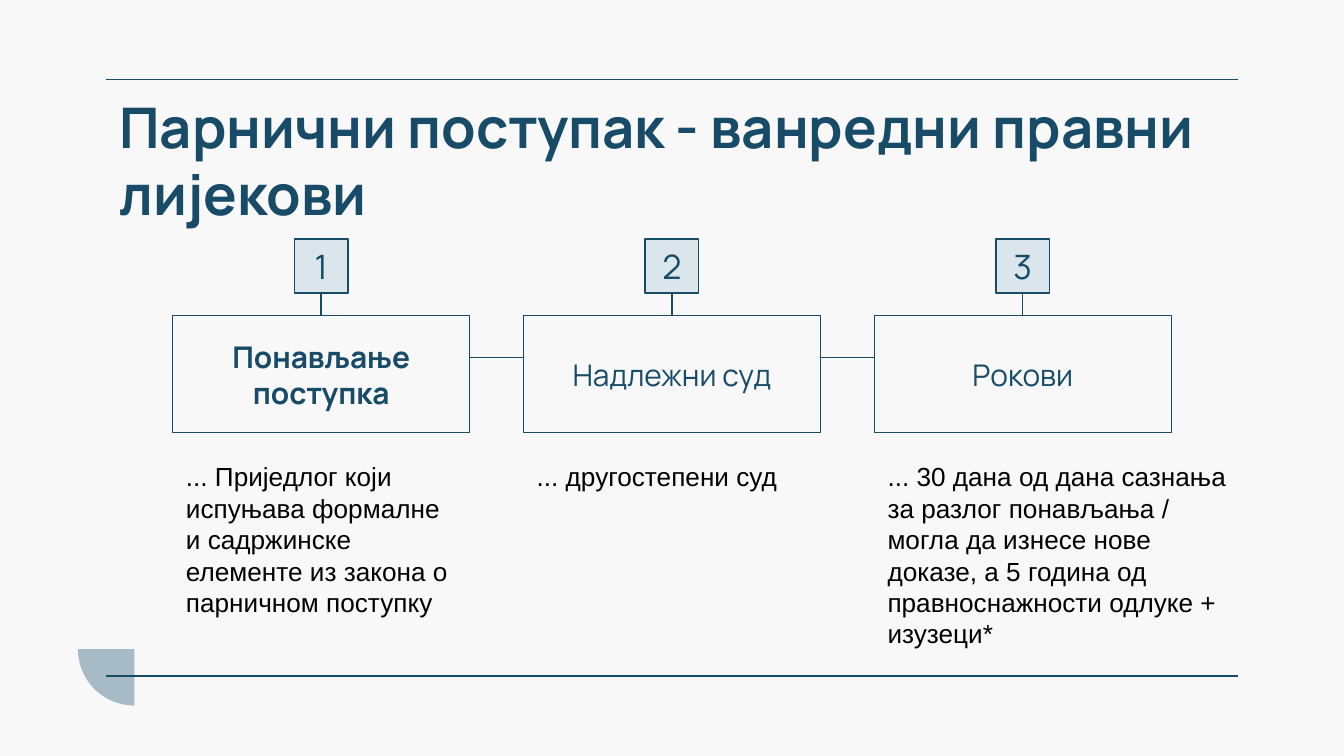
import math
from dataclasses import dataclass

import pptx
import pptx.dml.color
import pptx.enum.shapes
import pptx.enum.text
import pptx.oxml.ns
import pptx.util
from lxml import etree

Inches = pptx.util.Inches
Pt = pptx.util.Pt
Align = pptx.enum.text.PP_ALIGN
Anchor = pptx.enum.text.MSO_ANCHOR

NAVY = "174B67"
PALE_BLUE = "DAE6EC"
GREY_BLUE = "A7BBC7"
BACKGROUND = "F8F8F8"
BLACK = "000000"

SLIDE_WIDTH = 10
SLIDE_HEIGHT = SLIDE_WIDTH * 9 / 16
CARD_TOP, CARD_WIDTH, CARD_HEIGHT = 2.35, 2.21, 0.87
CARD_GAP = 0.4
CARD_STEP = CARD_WIDTH + CARD_GAP
CARD_LEFT = (SLIDE_WIDTH - CARD_WIDTH) / 2 - CARD_STEP
BADGE_TOP, BADGE_SIZE = 1.78, 0.4
LINK_Y, DETAIL_TOP = 2.66, 3.38


@dataclass
class Step:
    heading: str
    detail: str
    detail_width: float
    detail_height: float
    bold: bool = False


STEPS = [
    Step("Понављање поступка",
         "... Приједлог који испуњава формалне и садржинске елементе "
         "из закона о парничном поступку", CARD_WIDTH, 1.28, bold=True),
    Step("Надлежни суд", "... другостепени суд", CARD_WIDTH, 0.34),
    Step("Рокови",
         "... 30 дана од дана сазнања за разлог понављања / могла да изнесе "
         "нове доказе, а 5 година од правноснажности одлуке + изузеци*",
         2.78, 1.51),
]


def paint(color_format, color: str) -> None:
    color_format.rgb = pptx.dml.color.RGBColor.from_string(color)


def write(box, text: str, *, size: float, font: str = "Manrope",
          color: str = NAVY, bold: bool = False, align=Align.LEFT,
          anchor=Anchor.TOP, inset_y: float = 0.1) -> None:
    frame = box.text_frame
    frame.word_wrap = True
    frame.vertical_anchor = anchor
    frame.margin_left = frame.margin_right = Inches(0.1)
    frame.margin_top = frame.margin_bottom = Inches(inset_y)
    para = frame.paragraphs[0]
    para.alignment = align
    span = para.add_run()
    span.text = text
    span.font.name = font
    span.font.size = Pt(size)
    span.font.bold = bold
    paint(span.font.color, color)


def add_text(page, left: float, top: float, width: float, height: float,
             text: str, **style) -> None:
    box = page.shapes.add_textbox(
        Inches(left), Inches(top), Inches(width), Inches(height))
    write(box, text, **style)


def add_box(page, left: float, top: float, width: float, height: float,
            text: str, fill: str | None = None, **style) -> None:
    box = page.shapes.add_shape(
        pptx.enum.shapes.MSO_SHAPE.RECTANGLE,
        Inches(left), Inches(top), Inches(width), Inches(height))
    box.shadow.inherit = False
    if fill:
        box.fill.solid()
        paint(box.fill.fore_color, fill)
    else:
        box.fill.background()
    paint(box.line.color, NAVY)
    box.line.width = Pt(0.75)
    write(box, text, align=Align.CENTER, anchor=Anchor.MIDDLE, **style)


def add_line(page, x1: float, y1: float, x2: float, y2: float,
             kind=pptx.enum.shapes.MSO_CONNECTOR.STRAIGHT) -> None:
    line = page.shapes.add_connector(
        kind, Inches(x1), Inches(y1), Inches(x2), Inches(y2))
    paint(line.line.color, NAVY)
    line.line.width = Pt(0.75)
    etree.SubElement(line._element.spPr, pptx.oxml.ns.qn("a:effectLst"))


def add_quarter_disc(page, center_x: float, center_y: float, radius: float) -> None:
    angles = [math.radians(degree) for degree in range(90, 181, 3)]
    arc = [(Inches(center_x + radius * math.cos(angle)),
            Inches(center_y + radius * math.sin(angle))) for angle in angles]
    builder = page.shapes.build_freeform(Inches(center_x), Inches(center_y))
    builder.add_line_segments(arc, close=True)
    disc = builder.convert_to_shape()
    disc.shadow.inherit = False
    disc.fill.solid()
    paint(disc.fill.fore_color, GREY_BLUE)
    disc.line.fill.background()


def add_step(page, index: int, step: Step) -> None:
    left = CARD_LEFT + index * CARD_STEP
    center = left + CARD_WIDTH / 2
    add_box(page, left, CARD_TOP, CARD_WIDTH, CARD_HEIGHT,
            step.heading, size=16, bold=step.bold)
    add_box(page, center - BADGE_SIZE / 2, BADGE_TOP, BADGE_SIZE, BADGE_SIZE,
            str(index + 1), fill=PALE_BLUE, size=18)
    add_line(page, center, BADGE_TOP + BADGE_SIZE, center, CARD_TOP)
    if index:
        add_line(page, left - CARD_GAP, LINK_Y, left, LINK_Y,
                 kind=pptx.enum.shapes.MSO_CONNECTOR.ELBOW)
    add_text(page, left, DETAIL_TOP, step.detail_width, step.detail_height,
             step.detail, size=14, font="Arial", color=BLACK, inset_y=0.05)


def main() -> None:
    deck = pptx.Presentation()
    deck.slide_width = Inches(SLIDE_WIDTH)
    deck.slide_height = Inches(SLIDE_HEIGHT)
    page = deck.slides.add_slide(deck.slide_layouts[6])
    page.background.fill.solid()
    paint(page.background.fill.fore_color, BACKGROUND)

    add_quarter_disc(page, 1, 4.83, 0.42)
    for y in (0.59, 5.03):
        add_line(page, 0.79, y, 9.21, y)
    add_text(page, 0.79, 0.59, 8.43, 0.57,
             "Парнични поступак - ванредни правни лијекови", size=30, bold=True)
    for index, step in enumerate(STEPS):
        add_step(page, index, step)
    deck.save("out.pptx")


if __name__ == "__main__":
    main()
